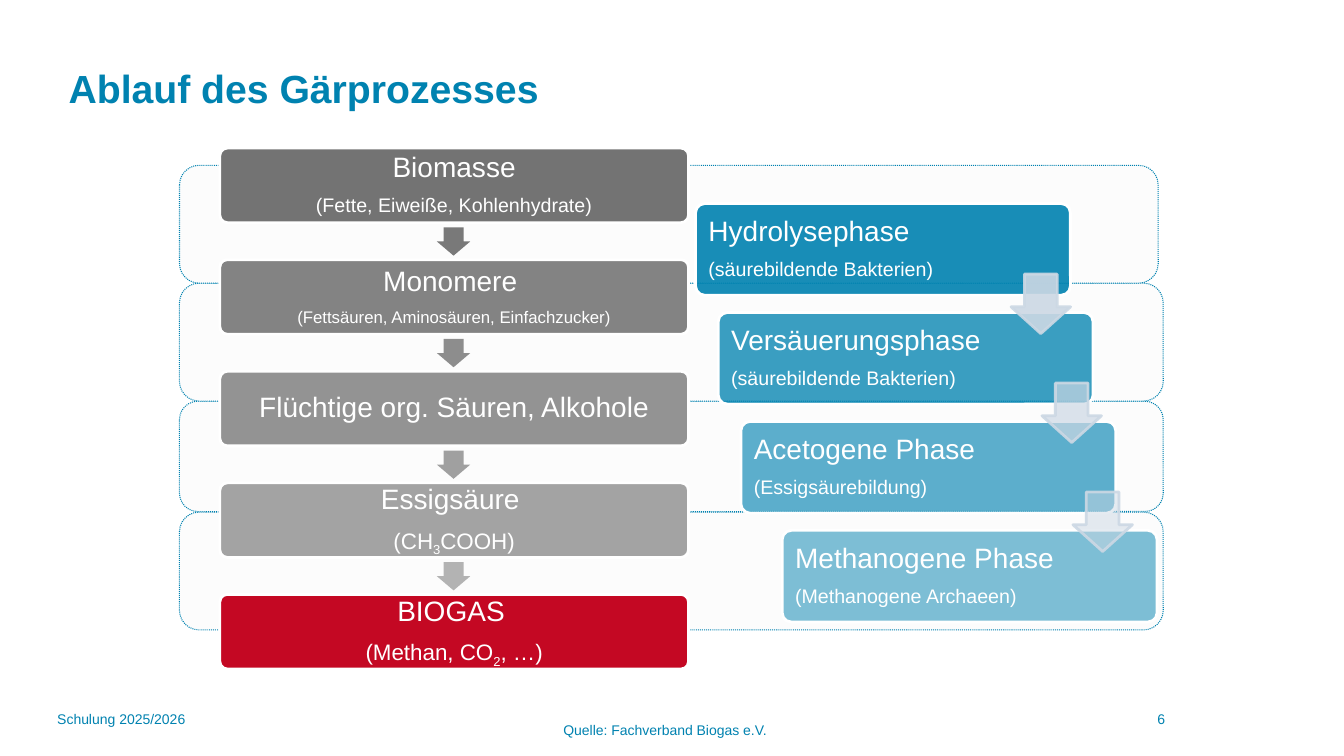
"""Build the slide on the stages of the biogas fermentation process."""
from dataclasses import dataclass

from lxml.etree import SubElement
from pptx import Presentation
from pptx.dml.color import RGBColor
from pptx.enum.dml import MSO_LINE
from pptx.enum.shapes import MSO_SHAPE
from pptx.enum.text import MSO_ANCHOR, PP_ALIGN
from pptx.oxml.ns import qn
from pptx.shapes.autoshape import Shape
from pptx.slide import Slide
from pptx.text.text import TextFrame
from pptx.util import Pt

COLORS = {"blue": "0082B0", "band": "FCFCFC", "transfer": "CCD8E4",
          "white": "FFFFFF", "red": "C40823"}
FONT = "Arial"


@dataclass(frozen=True)
class Box:
    """Position and size in points."""
    left: float
    top: float
    width: float
    height: float


@dataclass(frozen=True)
class Span:
    """Piece of text with one size."""
    text: str
    size: float
    subscript: bool = False


@dataclass(frozen=True)
class Style:
    """Fill and outline of a shape, with opacity in percent."""
    fill: str
    line: str | None = None
    width: float = 2
    fill_opacity: int = 100
    line_opacity: int = 100


@dataclass(frozen=True)
class Step:
    """Substance in the left column, with the colour of the arrow below it."""
    fill: str
    arrow: str | None
    lines: list[list[Span]]


@dataclass(frozen=True)
class Phase:
    """Process phase in the right column."""
    left: float
    opacity: int
    name: str
    detail: str


BANDS = [Box(128.2, 118.1, 699.1, 84.2), Box(128.2, 202.3, 702.7, 84.2),
         Box(128.2, 286.6, 702.7, 78.8), Box(128.2, 365.8, 702.7, 84.2)]

STEPS = [
    Step("737373", "797979", [[Span("Biomasse", 20)],
                              [Span("(Fette, Eiweiße, Kohlenhydrate)", 14)]]),
    Step("838383", "8D8D8D", [[Span("Monomere ", 20)],
                              [Span("(Fettsäuren, Aminosäuren, Einfachzucker)", 12)]]),
    Step("939393", "A0A0A0", [[Span("Flüchtige org. Säuren, Alkohole", 20)]]),
    Step("A3A3A3", "B3B3B3", [[Span("Essigsäure ", 20)],
                              [Span("(CH", 16), Span("3", 16, True), Span("COOH)", 16)]]),
    Step(COLORS["red"], None, [[Span("BIOGAS", 20), Span(" ", 16)],
                               [Span("(Methan, CO", 16), Span("2", 16, True), Span(", …)", 16)]]),
]

PHASES = [
    Phase(496.8, 90, "Hydrolysephase", "(säurebildende Bakterien)"),
    Phase(513, 77, "Versäuerungsphase", "(säurebildende Bakterien)"),
    Phase(529.2, 63, "Acetogene Phase", "(Essigsäurebildung)"),
    Phase(558.7, 50, "Methanogene Phase", "(Methanogene Archaeen)"),
]
TRANSFER_OPACITIES = [90, 70, 50]
STEP_PITCH = 79.7
PHASE_PITCH = 77.8


def set_opacity(shape: Shape, tag: str, percent: int) -> None:
    """Give the solid fill or outline colour found at tag an opacity."""
    color = shape.element.spPr.find(f"{tag}/{qn('a:srgbClr')}")
    SubElement(color, qn("a:alpha")).set("val", str(percent * 1000))


def draw_shape(slide: Slide, kind: MSO_SHAPE, box: Box, style: Style,
               adjustments: tuple[float, ...] = ()) -> Shape:
    """Draw a preset shape without shadow."""
    shape = slide.shapes.add_shape(
        kind, Pt(box.left), Pt(box.top), Pt(box.width), Pt(box.height))
    shape.shadow.inherit = False
    for index, value in enumerate(adjustments):
        shape.adjustments[index] = value
    shape.fill.solid()
    shape.fill.fore_color.rgb = RGBColor.from_string(style.fill)
    if style.fill_opacity < 100:
        set_opacity(shape, qn("a:solidFill"), style.fill_opacity)
    if style.line is None:
        shape.line.fill.background()
        return shape
    shape.line.color.rgb = RGBColor.from_string(style.line)
    shape.line.width = Pt(style.width)
    if style.line_opacity < 100:
        set_opacity(shape, f"{qn('a:ln')}/{qn('a:solidFill')}", style.line_opacity)
    return shape


def write(frame: TextFrame, lines: list[list[Span]], color: str,
          align: PP_ALIGN = PP_ALIGN.LEFT, bold: bool = False) -> None:
    """Write lines of text run by run."""
    frame.word_wrap = True
    for index, spans in enumerate(lines):
        paragraph = frame.paragraphs[0] if index == 0 else frame.add_paragraph()
        paragraph.alignment = align
        for span in spans:
            run = paragraph.add_run()
            run.text = span.text
            run.font.name = FONT
            run.font.size = Pt(span.size)
            run.font.bold = bold
            run.font.color.rgb = RGBColor.from_string(color)
            if span.subscript:
                run._r.get_or_add_rPr().set("baseline", "-25000")


def draw_card(slide: Slide, box: Box, style: Style,
              lines: list[list[Span]], align: PP_ALIGN) -> None:
    """Draw a rounded card with white text."""
    frame = draw_shape(slide, MSO_SHAPE.ROUNDED_RECTANGLE, box, style, (0.1,)).text_frame
    frame.margin_left = frame.margin_right = Pt(7.3)
    frame.margin_top = frame.margin_bottom = Pt(7.3)
    frame.vertical_anchor = MSO_ANCHOR.MIDDLE
    write(frame, lines, COLORS["white"], align)
    for paragraph in frame.paragraphs:
        paragraph.line_spacing = 0.9
    for paragraph in frame.paragraphs[:-1]:
        paragraph.space_after = Pt(8.4)


def draw_note(slide: Slide, box: Box, text: str, align: PP_ALIGN = PP_ALIGN.LEFT) -> None:
    """Draw a small line of text at the foot of the slide."""
    note = slide.shapes.add_textbox(
        Pt(box.left), Pt(box.top), Pt(box.width), Pt(box.height))
    write(note.text_frame, [[Span(text, 10)]], COLORS["blue"], align)


def main() -> None:
    """Build and save the slide."""
    deck = Presentation()
    deck.slide_width, deck.slide_height = Pt(960), Pt(540)
    slide = deck.slides.add_slide(deck.slide_layouts[5])

    title = slide.shapes.title
    title.left, title.top, title.width, title.height = Pt(41.8), Pt(18), Pt(620), Pt(90)
    title.text_frame.vertical_anchor = MSO_ANCHOR.MIDDLE
    write(title.text_frame, [[Span("Ablauf des Gärprozesses", 28)]], COLORS["blue"], bold=True)

    for band in reversed(BANDS):
        outline = draw_shape(slide, MSO_SHAPE.ROUNDED_RECTANGLE, band,
                             Style(COLORS["band"], COLORS["blue"], 0.75))
        outline.line.dash_style = MSO_LINE.ROUND_DOT

    for row, phase in enumerate(PHASES):
        draw_card(slide, Box(phase.left, 145.4 + row * PHASE_PITCH, 267.8, 65.5),
                  Style(COLORS["blue"], COLORS["white"], fill_opacity=phase.opacity),
                  [[Span(phase.name, 20)], [Span(phase.detail, 14)]], PP_ALIGN.LEFT)
    for row, opacity in enumerate(TRANSFER_OPACITIES):
        draw_shape(slide, MSO_SHAPE.DOWN_ARROW,
                   Box(722.2 + row * 22.1, 195.8 + row * PHASE_PITCH, 42.5, 42.5),
                   Style(COLORS["transfer"], COLORS["transfer"], 2, opacity, 90), (0.55, 0.45))

    for row, step in enumerate(STEPS):
        offset = row * STEP_PITCH
        draw_card(slide, Box(157, 105.8 + offset, 334.8, 53.3),
                  Style(step.fill, COLORS["white"]), step.lines, PP_ALIGN.CENTER)
        if step.arrow:
            draw_shape(slide, MSO_SHAPE.DOWN_ARROW, Box(312.1, 162.4 + offset, 23.8, 20.2),
                       Style(step.arrow), (0.6, 0.5))

    draw_note(slide, Box(33.8, 504, 234, 36), "Schulung 2025/2026")
    draw_note(slide, Box(729.4, 504, 200.2, 36), "6", PP_ALIGN.CENTER)
    draw_note(slide, Box(395.3, 511.9, 162.7, 19.4), "Quelle: Fachverband Biogas e.V.")
    deck.save("out.pptx")


if __name__ == "__main__":
    main()
